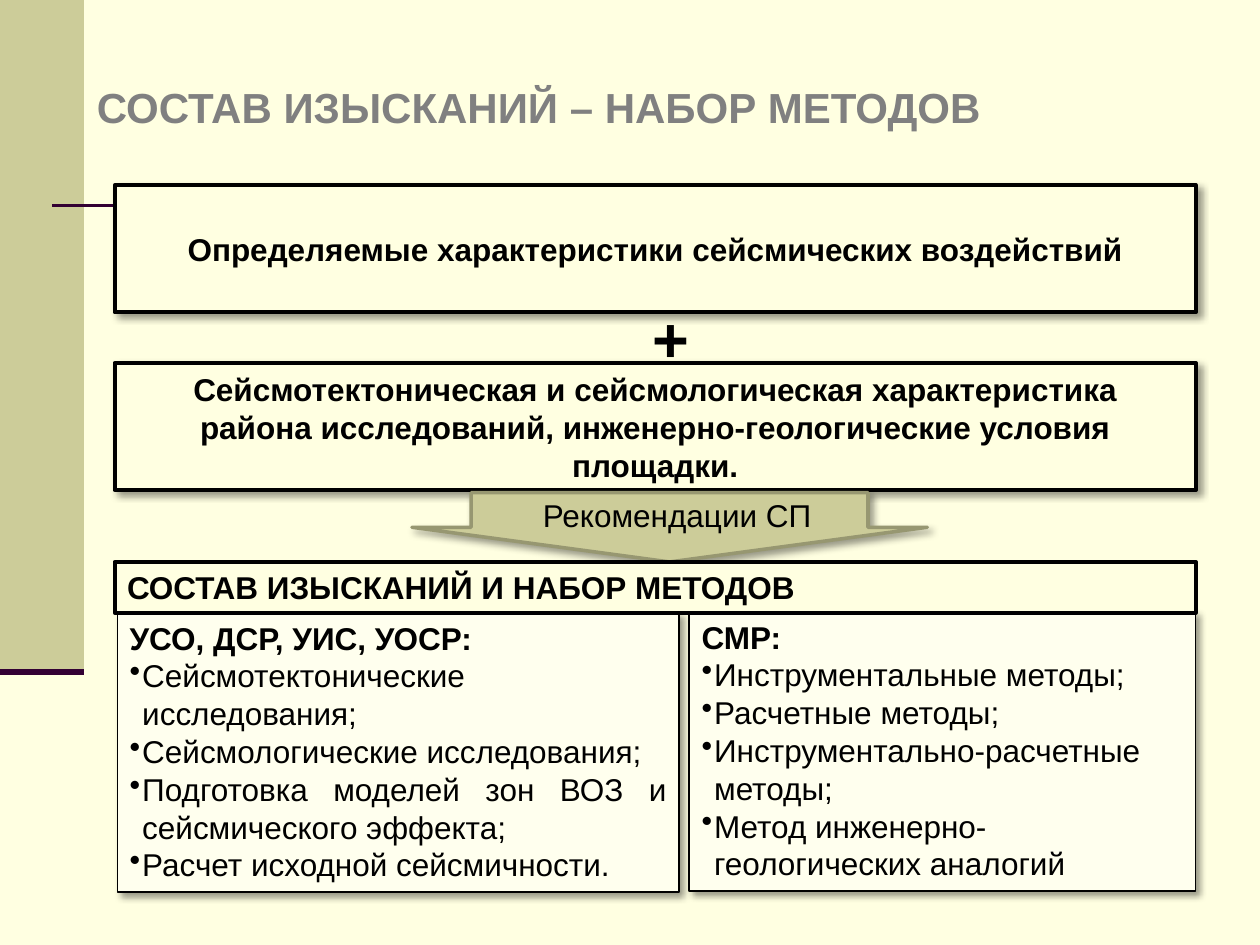
"""Build the slide on the scope of seismic surveys and the set of methods."""
from lxml.etree import SubElement
from pptx import Presentation
from pptx.dml.color import RGBColor
from pptx.enum.shapes import MSO_CONNECTOR, MSO_SHAPE
from pptx.enum.text import MSO_ANCHOR, MSO_AUTO_SIZE, PP_ALIGN
from pptx.oxml.ns import qn
from pptx.util import Pt

COLORS = {
    "background": "FFFFE1", "panel": "FFFFEE", "olive": "CCCC99",
    "olive_edge": "979771", "plum": "330033", "title": "808080", "black": "000000",
}
LEFT, WIDTH = 65.5, 617.8
INDENT = 7.2


def color(name):
    return RGBColor.from_string(COLORS[name])


def place(item, left, top, width, height):
    item.left, item.top, item.width, item.height = map(Pt, (left, top, width, height))


def format_text(paragraph, size=18, bold=False, ink="black", align=PP_ALIGN.LEFT):
    font = paragraph.font
    font.name, font.size, font.bold = "Arial", Pt(size), bold
    font.color.rgb = color(ink)
    paragraph.alignment = align


def write_lines(frame, lines, anchor=MSO_ANCHOR.TOP, **style):
    frame.word_wrap = True
    frame.vertical_anchor = anchor
    frame.text = "\n".join(lines)
    for paragraph in frame.paragraphs:
        format_text(paragraph, **style)


def add_bullet(paragraph):
    properties = paragraph._p.get_or_add_pPr()
    properties.set("marL", str(Pt(INDENT)))
    properties.set("indent", str(-Pt(INDENT)))
    SubElement(properties, qn("a:buChar"), char="•")


def cast_shadow(shape):
    effects = shape._element.spPr.find(qn("a:effectLst"))
    shadow = SubElement(effects, qn("a:outerShdw"), blurRad=str(Pt(4)), dist=str(Pt(3)),
                        dir="2700000", algn="tl", rotWithShape="0")
    ink = SubElement(shadow, qn("a:srgbClr"), val=COLORS["black"])
    SubElement(ink, qn("a:alpha"), val="40000")


def add_block(slide, box, fill, edge=None, weight=0, shadow=True, kind=MSO_SHAPE.RECTANGLE):
    block = slide.shapes.add_shape(kind, *map(Pt, box))
    block.shadow.inherit = False
    block.fill.solid()
    block.fill.fore_color.rgb = color(fill)
    if edge:
        block.line.color.rgb = color(edge)
        block.line.width = Pt(weight)
    else:
        block.line.fill.background()
    if shadow:
        cast_shadow(block)
    return block


def add_rule(slide, start, end, top, weight):
    rule = slide.shapes.add_connector(MSO_CONNECTOR.STRAIGHT, *map(Pt, (start, top, end, top)))
    rule.line.color.rgb = color("plum")
    rule.line.width = Pt(weight)
    SubElement(rule._element.spPr, qn("a:effectLst"))


def add_statement(slide, top, lines):
    block = add_block(slide, (LEFT, top, WIDTH, 72.7), "background", "black", 2.25)
    write_lines(block.text_frame, lines, MSO_ANCHOR.MIDDLE, bold=True, align=PP_ALIGN.CENTER)


def add_method_list(slide, left, top, width, heading, methods, align):
    panel = add_block(slide, (left, top, width, 159.8), "panel", "black", 0.75)
    frame = panel.text_frame
    frame.word_wrap = True
    frame.vertical_anchor = MSO_ANCHOR.TOP
    frame.text = heading
    format_text(frame.paragraphs[0], bold=True, align=align)
    for method in methods:
        paragraph = frame.add_paragraph()
        paragraph.text = method
        add_bullet(paragraph)
        format_text(paragraph, align=align)


def add_label(slide, box, text, **style):
    label = slide.shapes.add_textbox(*map(Pt, box))
    write_lines(label.text_frame, [text], **style)


def add_title(slide, text):
    title = slide.shapes.title
    place(title, 48.2, 43, 521.3, 36.4)
    title.text_frame.auto_size = MSO_AUTO_SIZE.NONE
    write_lines(title.text_frame, [text], size=24, bold=True, ink="title")


def main():
    deck = Presentation()
    deck.slide_width, deck.slide_height = Pt(720), Pt(540)
    slide = deck.slides.add_slide(deck.slide_layouts[5])
    slide.background.fill.solid()
    slide.background.fill.fore_color.rgb = color("background")

    add_block(slide, (0, 0, 48, 384), "olive", shadow=False)
    add_rule(slide, 30, 683, 117.5, 1.5)
    add_rule(slide, 0, 48, 384, 3.5)
    add_title(slide, "СОСТАВ ИЗЫСКАНИЙ – НАБОР МЕТОДОВ")

    add_statement(slide, 105.8, ["Определяемые характеристики сейсмических воздействий"])
    add_statement(slide, 207.4, [
        "Сейсмотектоническая и сейсмологическая характеристика",
        "района исследований, инженерно-геологические условия площадки."])
    add_label(slide, (365.8, 167.8, 41.8, 51), "+", size=36, bold=True)

    arrow = add_block(slide, (235.4, 281.5, 294.5, 39.6), "olive", "olive_edge", 2,
                      kind=MSO_SHAPE.DOWN_ARROW)
    arrow.adjustments[0], arrow.adjustments[1] = 0.77, 0.5
    add_label(slide, (303.1, 280.1, 169.2, 29), "Рекомендации СП")

    add_method_list(slide, 67, 350, 321.1, "УСО, ДСР, УИС, УОСР:", [
        "Сейсмотектонические исследования;",
        "Сейсмологические исследования;",
        "Подготовка моделей зон ВОЗ и сейсмического эффекта;",
        "Расчет исходной сейсмичности."], PP_ALIGN.JUSTIFY)
    add_method_list(slide, 393.8, 349.4, 289.4, "СМР:", [
        "Инструментальные методы;",
        "Расчетные методы;",
        "Инструментально-расчетные методы;",
        "Метод инженерно-геологических аналогий"], PP_ALIGN.LEFT)
    heading = add_block(slide, (LEFT, 321.1, WIDTH, 29), "background", "black", 2.25, shadow=False)
    write_lines(heading.text_frame, ["СОСТАВ ИЗЫСКАНИЙ И НАБОР МЕТОДОВ"], bold=True)

    deck.save("out.pptx")


if __name__ == "__main__":
    main()
